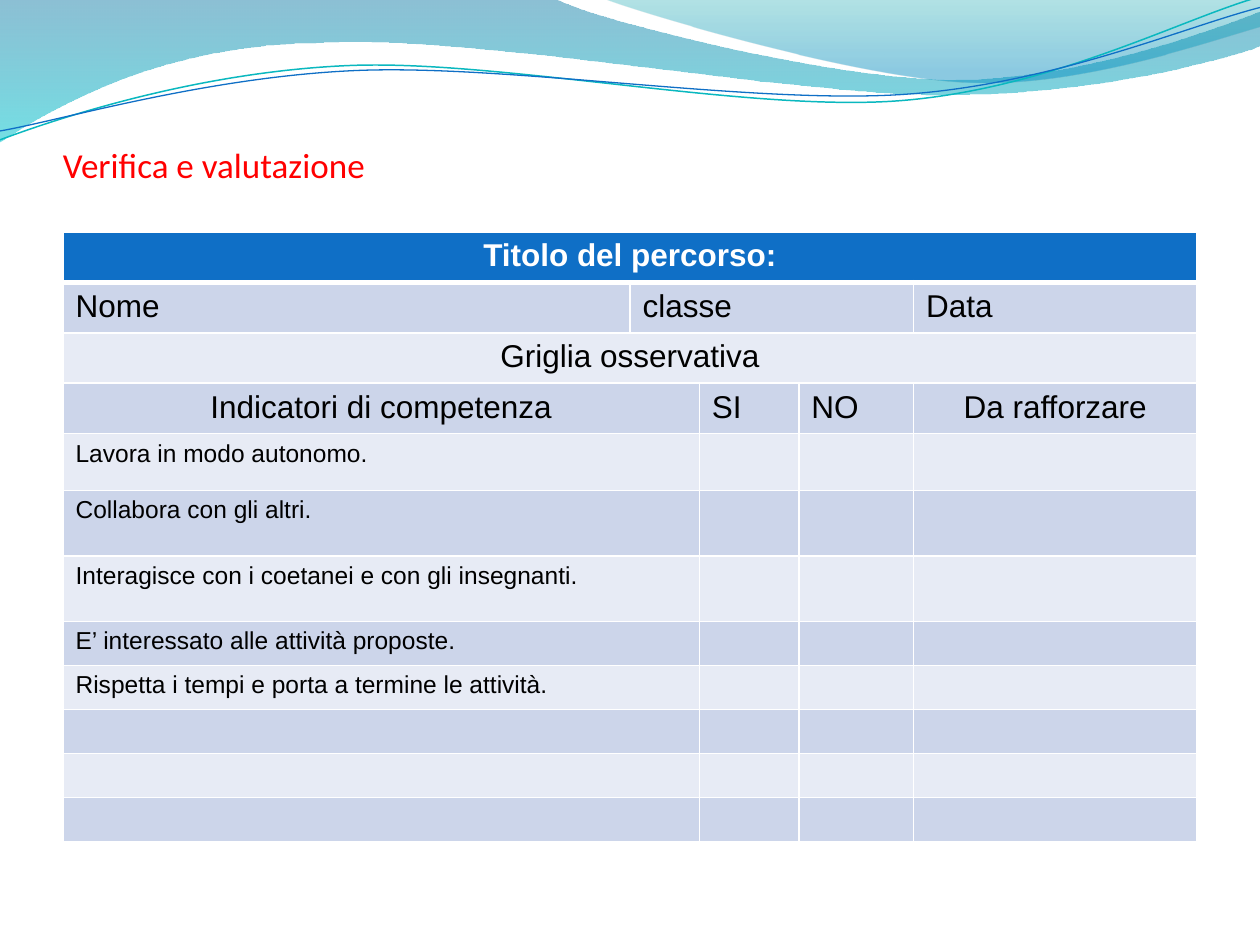
"""Build the slide with the observation grid of a learning path."""
from dataclasses import dataclass
from math import cos, radians, sin

from lxml.etree import SubElement as Sub
from pptx import Presentation
from pptx.dml.color import RGBColor as Rgb
from pptx.enum.text import MSO_ANCHOR as Anchor, PP_ALIGN as Align
from pptx.oxml.ns import qn
from pptx.util import Inches, Pt


@dataclass(frozen=True)
class Theme:
    """Hold colours, fonts and type sizes."""
    head: str = "0F6FC6"
    dark: str = "CCD5EA"
    pale: str = "E7EBF5"
    white: str = "FFFFFF"
    black: str = "000000"
    red: str = "FF0000"
    teal: str = "0AB8BF"
    deep: tuple = (("0074A1", 0, 45), ("00C6CF", 1, 55))
    light: tuple = (("00A1A9", 0, 30), ("008BBF", 0.8, 45))
    title: int = 20
    large: int = 18
    small: int = 14
    title_font: str = "Calibri"
    body_font: str = "Arial"


T = Theme()
BANDS = [
    (T.deep, [
        (0, -0.01), (4.4, -0.01),
        (4.76, 0.17, 6.64, 0.63, 7.58, 0.63), (8.53, 0.63, 9.58, 0.26, 10, 0.09),
        (10.01, 0.36),
        (9.83, 0.44, 8.7, 0.76, 7.46, 0.75), (6.22, 0.75, 3.82, 0.28, 2.57, 0.34),
        (1.29, 0.35, 0.46, 0.83, -0.01, 1.13), (0, -0.01)]),
    (T.light, [
        (4.79, -0.01),
        (5.09, 0.11, 6.82, 0.62, 7.69, 0.65), (8.56, 0.69, 9.61, 0.32, 10, 0.21),
        (10, 0), (4.79, -0.01)]),
]
LINES = [
    (T.teal, 0.85, (4.99, 0.58), [
        (0, 1.11),
        (0.48, 0.93, 1.58, 0.57, 2.77, 0.52), (3.95, 0.47, 5.93, 0.89, 7.13, 0.8),
        (8.33, 0.71, 9.38, 0.15, 9.98, -0.02)]),
    (T.head, 0.75, (5, 0.59), [
        (0, 1.04),
        (0.47, 0.96, 1.64, 0.61, 2.83, 0.56), (4.03, 0.51, 5.97, 0.83, 7.17, 0.75),
        (8.36, 0.67, 9.41, 0.21, 10, 0.06)]),
]
TILT = -2.7
COLS = [4.5, 0.55, 0.79, 0.91, 2.25]
ROWS = [0.38] * 4 + [0.45] + [0.52] * 2 + [0.35] * 5
HEADS = [
    [(0, 4, "Titolo del percorso:", Align.CENTER)],
    [(0, 0, "Nome", None), (1, 3, "classe", None), (4, 4, "Data", None)],
    [(0, 4, "Griglia osservativa", Align.CENTER)],
    [(0, 1, "Indicatori di competenza", Align.CENTER), (2, 2, "SI", None),
     (3, 3, "NO", None), (4, 4, "Da rafforzare", Align.CENTER)],
]
SKILLS = [
    "Lavora in modo autonomo.",
    "Collabora con gli altri.",
    "Interagisce con i coetanei e con gli insegnanti.",
    "E’ interessato alle attività proposte.",
    "Rispetta i tempi e porta a termine le attività.",
]


def style(item, **values):
    """Set each given value on the item."""
    for name, value in values.items():
        setattr(item, name, value)


def turn(dots, mid, angle):
    """Turn the points about a centre."""
    c, s = cos(radians(angle)), sin(radians(angle))
    return [(mid[0] + (x - mid[0]) * c - (y - mid[1]) * s,
             mid[1] + (x - mid[0]) * s + (y - mid[1]) * c) for x, y in dots]


def outline(slide, parts, close, mid=(0, 0), angle=0):
    """Draw a free outline of straight lines and cubic curves."""
    dots = [part[k:k + 2] for part in parts for k in range(0, len(part), 2)]
    dots = [(Inches(x), Inches(y)) for x, y in turn(dots, mid, angle)]
    pen = slide.shapes.build_freeform(*dots[0])
    pen.add_line_segments(dots[1:], close=close)
    shape = pen.convert_to_shape()
    shape.shadow.inherit = False
    steps = iter(list(shape.element.iter(qn("a:lnTo"))))
    for part in parts[1:]:
        group = [next(steps) for _ in range(len(part) // 2)]
        if len(group) == 3:
            route = group[0].getparent()
            curve = Sub(route, qn("a:cubicBezTo"))
            group[0].addprevious(curve)
            for step in group:
                curve.append(step[0])
                route.remove(step)
    return shape


def add_band(slide, stops, parts):
    """Add a wave band with a see-through gradient."""
    shape = outline(slide, parts, True)
    shape.line.fill.background()
    shape.fill.gradient()
    shape.fill.gradient_angle = 270
    for stop, (tone, place, _) in zip(shape.fill.gradient_stops, stops):
        stop.color.rgb = Rgb.from_string(tone)
        stop.position = place
    for node, (_, _, alpha) in zip(shape.element.iter(qn("a:srgbClr")), stops):
        Sub(node, qn("a:alpha"), val=str(alpha * 1000))


def add_line(slide, tone, width, mid, parts):
    """Add a thin tilted wave line."""
    shape = outline(slide, parts, False, mid, -TILT)
    shape.rotation = TILT
    shape.fill.background()
    shape.line.color.rgb = Rgb.from_string(tone)
    shape.line.width = Pt(width)


def write(par, text, tone, **font):
    """Write one run of text in a paragraph."""
    run = par.add_run()
    run.text = text
    style(run.font, **font)
    run.font.color.rgb = Rgb.from_string(tone)


def add_title(slide):
    """Add the slide title."""
    box = slide.shapes.add_textbox(Inches(0.5), Inches(0.6), Inches(9), Inches(0.87))
    frame = box.text_frame
    style(frame, word_wrap=True, vertical_anchor=Anchor.BOTTOM, margin_left=0,
          margin_right=0, margin_top=Inches(0.05), margin_bottom=0)
    write(frame.paragraphs[0], "Verifica e valutazione", T.red,
          size=Pt(T.title), name=T.title_font)


def paint(cell, row):
    """Give a cell its borders and fill."""
    props = cell._tc.get_or_add_tcPr()
    for side in "LRB" if row == 1 else "LRTB":
        thick = row == 0 and side == "B"
        line = Sub(props, qn(f"a:ln{side}"), w=str(Pt(3 if thick else 1)))
        Sub(Sub(line, qn("a:solidFill")), qn("a:srgbClr"), val=T.white)
    cell.fill.solid()
    tone = T.head if row == 0 else T.dark if row % 2 else T.pale
    cell.fill.fore_color.rgb = Rgb.from_string(tone)


def add_grid(slide):
    """Add the observation table."""
    skills = SKILLS + [""] * (len(ROWS) - len(HEADS) - len(SKILLS))
    rows = HEADS + [[(0, 1, text, Align.JUSTIFY)] for text in skills]
    frame = slide.shapes.add_table(len(ROWS), len(COLS), Inches(0.5), Inches(1.84),
                                   Inches(sum(COLS)), Inches(sum(ROWS)))
    table = frame.table
    style(table, first_row=False, horz_banding=False)
    for col, width in zip(table.columns, COLS):
        col.width = Inches(width)
    for r, (row, high) in enumerate(zip(rows, ROWS)):
        table.rows[r].height = Inches(high)
        for first, last, text, align in row:
            cell = table.cell(r, first)
            if last > first:
                cell.merge(table.cell(r, last))
            par = cell.text_frame.paragraphs[0]
            par.alignment = align
            if text:
                size = T.large if r < len(HEADS) else T.small
                write(par, text, T.black if r else T.white, size=Pt(size),
                      name=T.body_font, bold=r == 0)
        for c in range(len(COLS)):
            cell = table.cell(r, c)
            paint(cell, r)
            if not cell.text_frame.text:
                par = cell.text_frame.paragraphs[0]
                Sub(par._p, qn("a:endParaRPr"), sz=str(T.small * 100))


def main():
    """Build and save the slide."""
    deck = Presentation()
    style(deck, slide_width=Inches(10), slide_height=Inches(7.5))
    slide = deck.slides.add_slide(deck.slide_layouts[6])
    for band in BANDS:
        add_band(slide, *band)
    for line in LINES:
        add_line(slide, *line)
    add_title(slide)
    add_grid(slide)
    deck.save("out.pptx")


if __name__ == "__main__":
    main()
